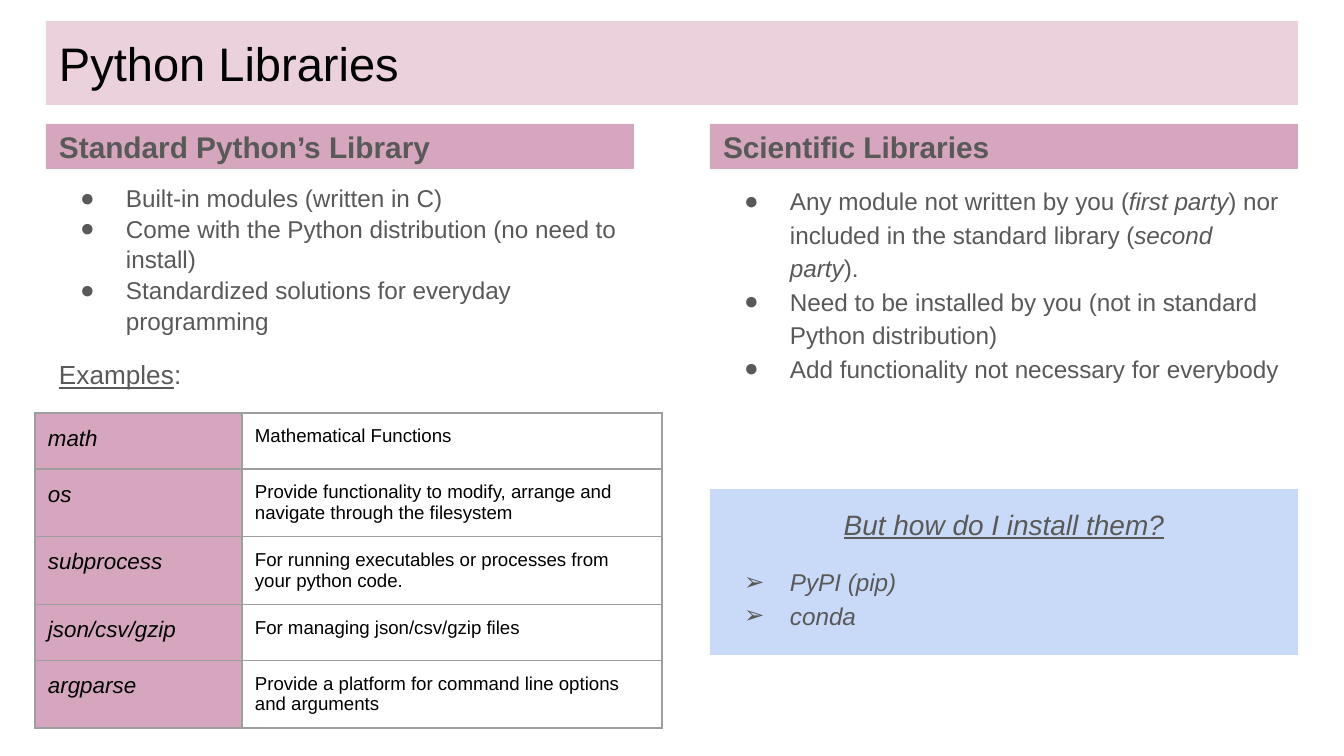
import pptx
import pptx.dml.color
import pptx.enum.shapes
import pptx.enum.text
import pptx.oxml
import pptx.oxml.ns
import pptx.util

RGBColor = pptx.dml.color.RGBColor
Pt = pptx.util.Pt
PP_ALIGN = pptx.enum.text.PP_ALIGN
ANCHOR = pptx.enum.text.MSO_ANCHOR

PALE_PINK = RGBColor(0xEA, 0xD1, 0xDC)
PINK = RGBColor(0xD5, 0xA6, 0xBD)
BLUE = RGBColor(0xC9, 0xDA, 0xF8)
GRAY = RGBColor(0x59, 0x59, 0x59)
BORDER = RGBColor(0x9E, 0x9E, 0x9E)
BLACK = RGBColor(0, 0, 0)

FONT = "Arial"
SLIDE_W, SLIDE_H = 1344, 756
INSET = 13
HEADING_H = 45
NSDECL = pptx.oxml.ns.nsdecls("a")

LIBRARIES = [
    ("math", "Mathematical Functions"),
    ("os", "Provide functionality to modify, arrange and navigate through the filesystem"),
    ("subprocess", "For running executables or processes from your python code."),
    ("json/csv/gzip", "For managing json/csv/gzip files"),
    ("argparse", "Provide a platform for command line options and arguments"),
]
STANDARD = [
    ["Built-in modules (written in C)"],
    ["Come with the Python distribution (no need to install)"],
    ["Standardized solutions for everyday programming"],
]
# Every second run of a point is in italics.
SCIENTIFIC = [
    ["Any module not written by you (", "first party",
     ") nor included in the standard library (", "second party", ")."],
    ["Need to be installed by you (not in standard Python distribution)"],
    ["Add functionality not necessary for everybody"],
]


def px(n):
    return pptx.util.Emu(round(n * 914400 * 10 / SLIDE_W))


def set_frame(tf, anchor=ANCHOR.TOP):
    tf.word_wrap = True
    tf.auto_size = pptx.enum.text.MSO_AUTO_SIZE.NONE
    tf.vertical_anchor = anchor
    tf.margin_left = tf.margin_right = tf.margin_top = tf.margin_bottom = px(INSET)


def style(r, size, color=GRAY, bold=False, italic=False, underline=False):
    f = r.font
    f.name, f.size, f.color.rgb = FONT, Pt(size), color
    f.bold, f.italic, f.underline = bold, italic, underline


def next_paragraph(tf):
    """Return the first paragraph while it is empty, then new ones."""
    return tf.paragraphs[0] if not tf.text else tf.add_paragraph()


def add_bullet(p, char):
    pPr = p._p.get_or_add_pPr()
    pPr.set("marL", str(px(67)))
    pPr.set("indent", str(px(-46)))
    for xml in (f'<a:buClr {NSDECL}><a:srgbClr val="{GRAY}"/></a:buClr>',
                f'<a:buFont {NSDECL} typeface="{FONT}"/>',
                f'<a:buChar {NSDECL} char="{char}"/>'):
        pPr.append(pptx.oxml.parse_xml(xml))


def add_points(tf, points, char, spacing, italic=False):
    for runs in points:
        p = next_paragraph(tf)
        add_bullet(p, char)
        p.line_spacing = spacing
        for i, text in enumerate(runs):
            r = p.add_run()
            r.text = text
            style(r, 13, italic=italic or i % 2 == 1)


def add_panel(slide, x, y, w, h, color, anchor=ANCHOR.TOP):
    sp = slide.shapes.add_shape(pptx.enum.shapes.MSO_SHAPE.RECTANGLE,
                                px(x), px(y), px(w), px(h))
    sp.shadow.inherit = False
    sp.fill.solid()
    sp.fill.fore_color.rgb = color
    sp.line.fill.background()
    set_frame(sp.text_frame, anchor)
    return sp.text_frame


def add_title(slide, x, y, w, h):
    sp = slide.shapes.title
    sp.left, sp.top, sp.width, sp.height = px(x), px(y), px(w), px(h)
    sp.fill.solid()
    sp.fill.fore_color.rgb = PALE_PINK
    tf = sp.text_frame
    tf.text = "Python Libraries"
    set_frame(tf, ANCHOR.MIDDLE)
    p = tf.paragraphs[0]
    p.alignment = PP_ALIGN.LEFT
    p.line_spacing = 1.0
    style(p.runs[0], 25.2, BLACK)


def add_column(slide, x, y, w, h, heading, points, spacing):
    """Add a heading bar with bullet points below it; return the points' frame."""
    tf = add_panel(slide, x, y, w, HEADING_H, PINK, ANCHOR.MIDDLE)
    tf.text = heading
    p = tf.paragraphs[0]
    p.alignment = PP_ALIGN.LEFT
    style(p.runs[0], 16, bold=True)
    body = slide.shapes.add_textbox(px(x), px(y + HEADING_H), px(w), px(h - HEADING_H))
    set_frame(body.text_frame)
    add_points(body.text_frame, points, "●", spacing)
    return body.text_frame


def add_examples_label(tf):
    p = tf.add_paragraph()
    p.line_spacing = 1.05
    p.space_before = p.space_after = Pt(12)
    for text, underline in (("Examples", True), (":", False)):
        r = p.add_run()
        r.text = text
        style(r, 14, underline=underline)


def set_borders(cell):
    tcPr = cell._tc.get_or_add_tcPr()
    for side in "LRTB":
        tcPr.append(pptx.oxml.parse_xml(
            f'<a:ln{side} {NSDECL} w="{Pt(0.75)}"><a:solidFill>'
            f'<a:srgbClr val="{BORDER}"/></a:solidFill></a:ln{side}>'))


def add_library_table(slide, x, y, w, h):
    name_w = 207
    table = slide.shapes.add_table(len(LIBRARIES), 2, px(x), px(y), px(w), px(h)).table
    table.first_row = table.horz_banding = False
    table.columns[0].width = px(name_w)
    table.columns[1].width = px(w - name_w)
    for row, texts in zip(table.rows, LIBRARIES):
        row.height = px(h / len(LIBRARIES))
        for i, (cell, text) in enumerate(zip(row.cells, texts)):
            is_name = i == 0
            cell.text = text
            cell.margin_left = cell.margin_right = px(INSET)
            cell.margin_top = cell.margin_bottom = px(INSET)
            style(cell.text_frame.paragraphs[0].runs[0], 12 if is_name else 10,
                  BLACK, italic=is_name)
            set_borders(cell)
            if is_name:
                cell.fill.solid()
                cell.fill.fore_color.rgb = PINK
            else:
                cell.fill.background()


def add_install_box(slide, x, y, w, h):
    tf = add_panel(slide, x, y, w, h, BLUE)
    tf.text = "But how do I install them?"
    p = tf.paragraphs[0]
    p.alignment = PP_ALIGN.CENTER
    p.line_spacing = 1.15
    style(p.runs[0], 15, italic=True, underline=True)
    add_points(tf, [["PyPI (pip)"], ["conda"]], "➢", 1.15, italic=True)
    for p in tf.paragraphs[1:]:
        p.alignment = PP_ALIGN.LEFT
    tf.paragraphs[1].space_before = Pt(12)


def main():
    prs = pptx.Presentation()
    prs.slide_width, prs.slide_height = px(SLIDE_W), px(SLIDE_H)
    slide = prs.slides.add_slide(prs.slide_layouts.get_by_name("Title Only"))
    left, right, col_w = 46, 710, 588
    add_title(slide, left, 21, right + col_w - left, 84)
    standard = add_column(slide, left, 124, col_w, 288,
                          "Standard Python’s Library", STANDARD, 1.05)
    add_examples_label(standard)
    add_column(slide, right, 124, col_w, 288, "Scientific Libraries", SCIENTIFIC, 1.15)
    add_library_table(slide, 35, 413, 627, 280)
    add_install_box(slide, right, 489, col_w, 166)
    prs.save("out.pptx")


if __name__ == "__main__":
    main()
